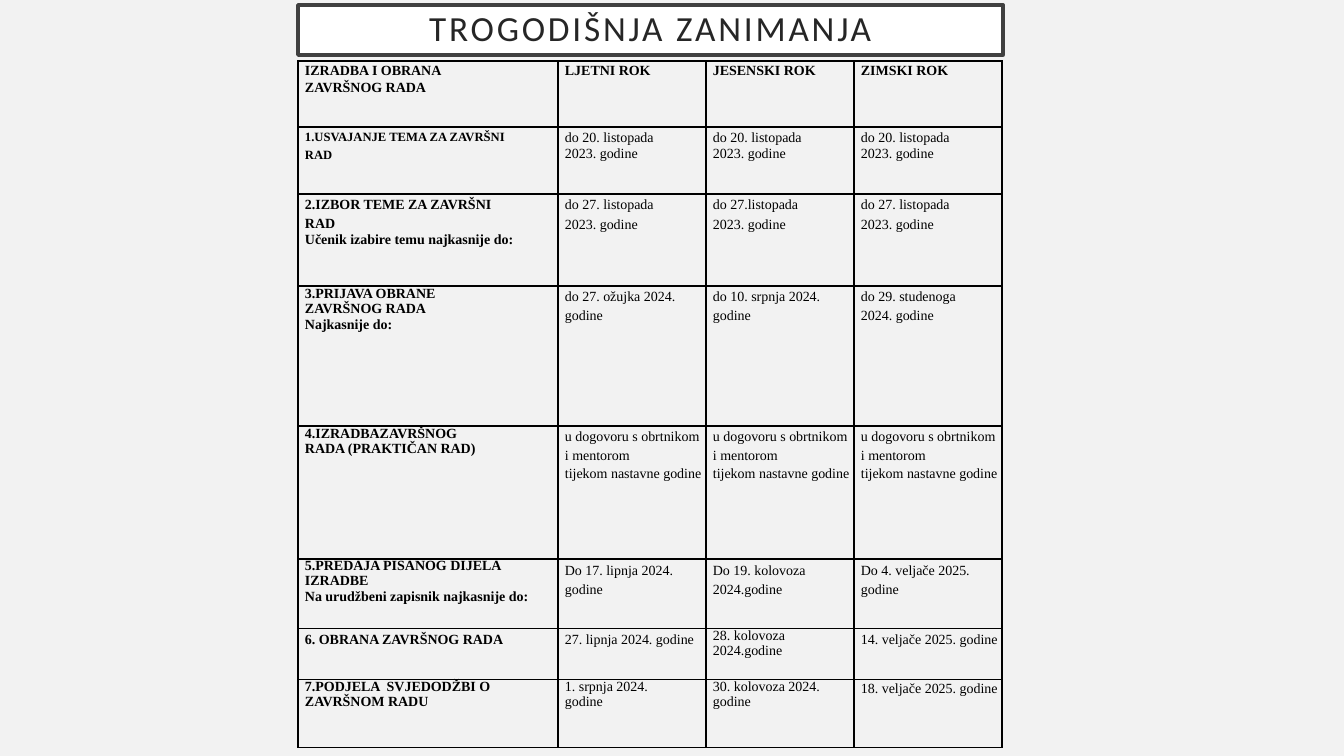
from lxml import etree
from pptx import Presentation
from pptx.dml.color import RGBColor
from pptx.enum.text import MSO_ANCHOR, MSO_AUTO_SIZE, PP_ALIGN
from pptx.oxml.ns import qn
from pptx.util import Pt

MIDDLE = MSO_ANCHOR.MIDDLE
NO_AUTOFIT = MSO_AUTO_SIZE.NONE
CENTER = PP_ALIGN.CENTER

BACKGROUND = RGBColor(0xF2, 0xF2, 0xF2)
WHITE = RGBColor(0xFF, 0xFF, 0xFF)
BLACK = RGBColor(0x00, 0x00, 0x00)
FRAME_GRAY = RGBColor(0x40, 0x40, 0x40)
TITLE_GRAY = RGBColor(0x26, 0x26, 0x26)

TITLE_FONT = "Calibri"
TABLE_FONT = "Times New Roman"
SLIDE_WIDTH, SLIDE_HEIGHT = 1344, 756
EMU_PER_PX = 12192000 / SLIDE_WIDTH

TEXT_INDENT = 7
COLUMN_WIDTHS = [260, 148, 148, 148]
ROW_HEIGHTS = [66, 67, 92, 140, 133, 70, 51, 68]

# Each paragraph is (text, line spacing): points from 2 up, otherwise a multiple.
TOPIC_DATE = [("do 20. listopada", 13.4), ("2023. godine", 1.0)]
CHOICE_DATE = [("do 27. listopada", 13.4), ("2023. godine", 13.8)]
BY_AGREEMENT = [("u dogovoru s obrtnikom i mentorom", 13.3), ("tijekom nastavne godine", 13.4)]

ROWS = [
    [[("IZRADBA I OBRANA", 12.3), ("ZAVRŠNOG RADA", 12.3)],
     [("LJETNI ROK", 12.4)],
     [("JESENSKI ROK", 12.4)],
     [("ZIMSKI ROK", 12.4)]],
    [[("1.USVAJANJE TEMA ZA ZAVRŠNI", 12.4), ("RAD", 12.6)],
     TOPIC_DATE, TOPIC_DATE, TOPIC_DATE],
    [[("2.IZBOR TEME ZA ZAVRŠNI", 13.3), ("RAD", 13.8),
      ("Učenik izabire temu najkasnije do:", 1.0)],
     CHOICE_DATE,
     [("do 27.listopada", 13.4), ("2023. godine", 13.8)],
     CHOICE_DATE],
    [[("3.PRIJAVA OBRANE ZAVRŠNOG RADA Najkasnije do:", 1.0)],
     [("do 27. ožujka 2024. godine", 13.4)],
     [("do 10. srpnja 2024. godine", 13.4)],
     [("do 29. studenoga", 13.3), ("2024. godine", 13.8)]],
    [[("4.IZRADBAZAVRŠNOG", 1.0), ("RADA (PRAKTIČAN RAD)", 1.0)],
     BY_AGREEMENT, BY_AGREEMENT, BY_AGREEMENT],
    [[("5.PREDAJA PISANOG DIJELA IZRADBE", 0.97),
      ("Na urudžbeni zapisnik najkasnije do:", 1.0)],
     [("Do 17. lipnja 2024. godine", 13.7)],
     [("Do 19. kolovoza 2024.godine", 13.7)],
     [("Do 4. veljače 2025. godine", 13.7)]],
    [[("6. OBRANA ZAVRŠNOG RADA", 13.4)],
     [("27. lipnja 2024. godine", 13.3)],
     [("28. kolovoza 2024.godine", 0.97)],
     [("14. veljače 2025. godine", 13.3)]],
    [[("7.PODJELA  SVJEDODŽBI O ZAVRŠNOM RADU", 0.97)],
     [("1. srpnja 2024. godine", 0.97)],
     [("30. kolovoza 2024. godine", 0.97)],
     [("18. veljače 2025. godine", 12.2)]],
]
# Cells (row, column) whose text wraps before the cell edge.
RIGHT_MARGINS = {(3, 0): 80, (6, 2): 20, (7, 1): 20}
SMALL_TEXT_CELL = (1, 0)


def px(length):
    return round(length * EMU_PER_PX)


def set_margins(target, left, top, right, bottom):
    target.margin_left, target.margin_top = px(left), px(top)
    target.margin_right, target.margin_bottom = px(right), px(bottom)


def add_title(slide, text):
    title = slide.shapes.title
    title.left, title.top, title.width, title.height = px(298), px(5), px(705), px(50)
    title.fill.solid()
    title.fill.fore_color.rgb = WHITE
    title.line.color.rgb = FRAME_GRAY
    title.line.width = Pt(2.5)
    frame = title.text_frame
    frame.text = text
    frame.word_wrap = True
    frame.auto_size = NO_AUTOFIT
    frame.vertical_anchor = MIDDLE
    set_margins(frame, 20, 20, 20, 20)
    paragraph = frame.paragraphs[0]
    paragraph.alignment = CENTER
    paragraph.line_spacing = 0.9
    font = paragraph.runs[0].font
    font.name, font.size = TITLE_FONT, Pt(25.2)
    font.color.rgb = TITLE_GRAY
    paragraph.runs[0]._r.get_or_add_rPr().set("spc", "200")


def add_borders(cell):
    """Draw a thin black line on all four sides of the cell."""
    properties = cell._tc.get_or_add_tcPr()
    for position, side in enumerate(("a:lnL", "a:lnR", "a:lnT", "a:lnB")):
        line = etree.Element(qn(side), w=str(Pt(1)))
        fill = etree.SubElement(line, qn("a:solidFill"))
        etree.SubElement(fill, qn("a:srgbClr"), val=str(BLACK))
        properties.insert(position, line)


def fill_cell(cell, paragraphs, size, bold, right_margin):
    cell.fill.background()
    add_borders(cell)
    set_margins(cell, 0, 0, right_margin, 0)
    frame = cell.text_frame
    frame.text = "\n".join(text for text, _ in paragraphs)
    for paragraph, (_, spacing) in zip(frame.paragraphs, paragraphs):
        paragraph.line_spacing = Pt(spacing) if spacing >= 2 else spacing
        paragraph._p.get_or_add_pPr().set("marL", str(px(TEXT_INDENT)))
        font = paragraph.font
        font.name, font.size, font.bold = TABLE_FONT, Pt(size), bold
        font.color.rgb = BLACK


def add_schedule(slide):
    table = slide.shapes.add_table(
        len(ROWS), len(COLUMN_WIDTHS), px(298), px(61),
        px(sum(COLUMN_WIDTHS)), px(sum(ROW_HEIGHTS))).table
    table.first_row = table.horz_banding = False
    for column, width in zip(table.columns, COLUMN_WIDTHS):
        column.width = px(width)
    for row, height in zip(table.rows, ROW_HEIGHTS):
        row.height = px(height)
    for row_index, row in enumerate(ROWS):
        for column_index, paragraphs in enumerate(row):
            place = (row_index, column_index)
            fill_cell(table.cell(*place), paragraphs,
                      size=9 if place == SMALL_TEXT_CELL else 10,
                      bold=0 in place,
                      right_margin=RIGHT_MARGINS.get(place, 0))


def main():
    presentation = Presentation()
    presentation.slide_width = px(SLIDE_WIDTH)
    presentation.slide_height = px(SLIDE_HEIGHT)
    title_only = presentation.slide_layouts[5]
    slide = presentation.slides.add_slide(title_only)
    slide.background.fill.solid()
    slide.background.fill.fore_color.rgb = BACKGROUND
    add_title(slide, "TROGODIŠNJA ZANIMANJA")
    add_schedule(slide)
    presentation.save("out.pptx")


if __name__ == "__main__":
    main()
